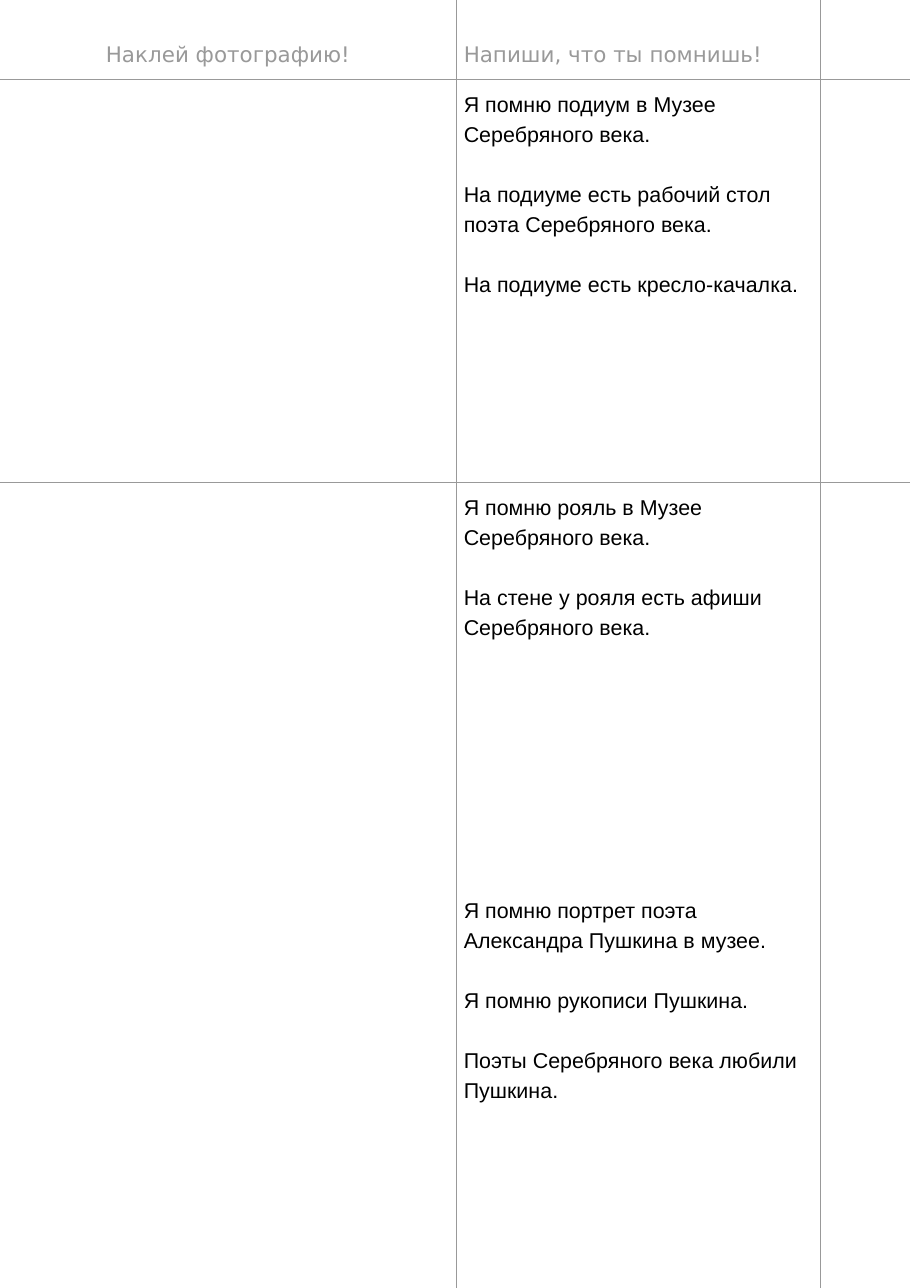
import lxml.etree
import pptx
import pptx.dml.color
import pptx.enum.text
import pptx.oxml.ns
import pptx.util

Inches = pptx.util.Inches
Pt = pptx.util.Pt
COLORS = {"grid": "999999", "heading": "999999", "body": "000000", "paper": "FFFFFF"}
LINE_HEIGHT = Pt(19.6)
ALIGN = pptx.enum.text.PP_ALIGN

column_widths = [4.14, 3.31, 0.82]
row_heights = [0.72, 3.66, 3.66, 3.66]
headings = [
    ("Наклей фотографию!", ALIGN.CENTER),
    ("Напиши, что ты помнишь!", ALIGN.LEFT),
]
memories = [
    [
        "Я помню подиум в Музее Серебряного века.",
        "На подиуме есть рабочий стол поэта Серебряного века.",
        "На подиуме есть кресло-качалка.",
    ],
    [
        "Я помню рояль в Музее Серебряного века.",
        "На стене у рояля есть афиши Серебряного века.",
    ],
    [
        "Я помню портрет поэта Александра Пушкина в музее.",
        "Я помню рукописи Пушкина.",
        "Поэты Серебряного века любили Пушкина.",
    ],
]


def write_text(cell, paragraphs, font="Arial", color="body", align=ALIGN.LEFT):
    for index, text in enumerate(paragraphs):
        frame = cell.text_frame
        paragraph = frame.add_paragraph() if index else frame.paragraphs[0]
        paragraph.alignment = align
        paragraph.line_spacing = LINE_HEIGHT
        if index:
            paragraph.space_before = LINE_HEIGHT
        run = paragraph.add_run()
        run.text = text
        run.font.name = font
        run.font.size = Pt(14)
        run.font.color.rgb = pptx.dml.color.RGBColor.from_string(COLORS[color])


def set_border(cell, side, visible):
    qn = pptx.oxml.ns.qn
    properties = cell._tc.get_or_add_tcPr()
    line = lxml.etree.SubElement(properties, qn(f"a:ln{side}"), w=str(Pt(0.53)))
    if visible:
        fill = lxml.etree.SubElement(line, qn("a:solidFill"))
        lxml.etree.SubElement(fill, qn("a:srgbClr"), val=COLORS["grid"])
    else:
        lxml.etree.SubElement(line, qn("a:noFill"))


presentation = pptx.Presentation()
presentation.slide_width = Inches(8.26)
presentation.slide_height = Inches(11.69)
slide = presentation.slides.add_slide(presentation.slide_layouts[6])

# Table grid
table = slide.shapes.add_table(
    len(row_heights), len(column_widths), 0, 0,
    Inches(sum(column_widths)), Inches(sum(row_heights)),
).table
table.first_row = False
table.horz_banding = False
for column, width in zip(table.columns, column_widths):
    column.width = Inches(width)
for row, height in zip(table.rows, row_heights):
    row.height = Inches(height)

# Cell margins, borders and fill: rules run below the first two rows only
for row_index in range(len(row_heights)):
    for column_index in range(len(column_widths)):
        cell = table.cell(row_index, column_index)
        cell.margin_left = cell.margin_right = Inches(0.07)
        cell.margin_top = cell.margin_bottom = Inches(0.07)
        set_border(cell, "L", column_index > 0)
        set_border(cell, "R", column_index < 2)
        set_border(cell, "T", row_index in (1, 2))
        set_border(cell, "B", row_index in (0, 1))
        cell.fill.solid()
        cell.fill.fore_color.rgb = pptx.dml.color.RGBColor.from_string(COLORS["paper"])

# Headings
for column_index, (heading, align) in enumerate(headings):
    cell = table.cell(0, column_index)
    cell.margin_top = Inches(0.34)
    write_text(cell, [heading], font="DejaVu Sans", color="heading", align=align)

# Memories
for row_index, sentences in enumerate(memories, start=1):
    write_text(table.cell(row_index, 1), sentences)

presentation.save("out.pptx")
